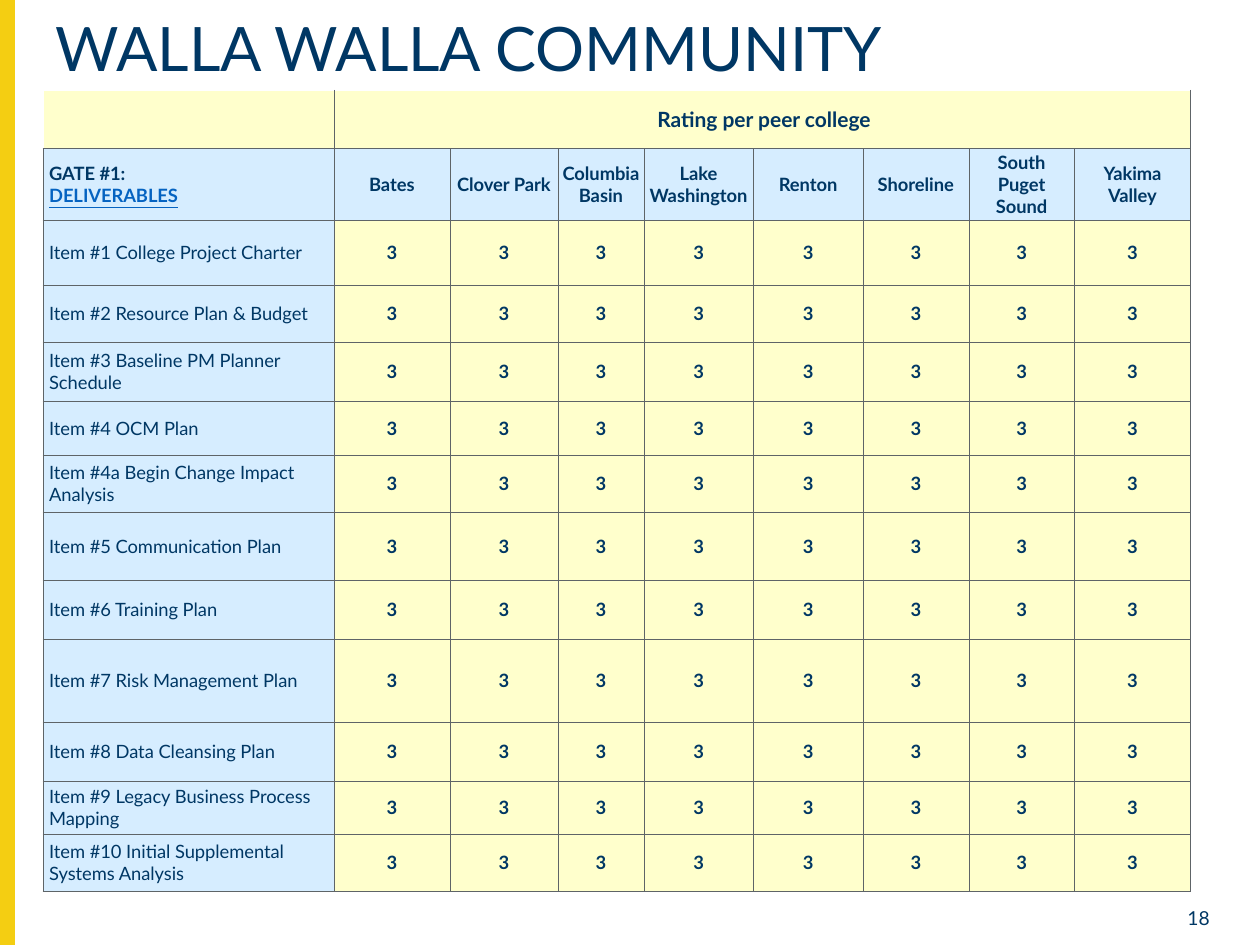
"""Builds the peer college rating slide for Walla Walla Community."""
from lxml import etree
from pptx import Presentation
from pptx.dml.color import RGBColor
from pptx.enum.shapes import MSO_SHAPE
from pptx.enum.text import MSO_ANCHOR, PP_ALIGN
from pptx.oxml.ns import qn
from pptx.util import Inches, Pt

RECTANGLE = MSO_SHAPE.RECTANGLE
TOP, MIDDLE = MSO_ANCHOR.TOP, MSO_ANCHOR.MIDDLE
LEFT, CENTER, RIGHT = PP_ALIGN.LEFT, PP_ALIGN.CENTER, PP_ALIGN.RIGHT

NAVY = RGBColor(0x00, 0x37, 0x64)
GOLD = RGBColor(0xF4, 0xCE, 0x12)
CREAM = RGBColor(0xFF, 0xFF, 0xCC)
SKY = RGBColor(0xD6, 0xED, 0xFF)
LINK_BLUE = RGBColor(0x05, 0x63, 0xC1)
GRAY = RGBColor(0x5E, 0x64, 0x67)
WHITE = RGBColor(0xFF, 0xFF, 0xFF)

COLUMN_WIDTHS = [2.31, 0.92, 0.86, 0.68, 0.87, 0.87, 0.84, 0.84, 0.92]
ROW_HEIGHTS = [0.46, 0.5, 0.52, 0.45, 0.47, 0.43, 0.45, 0.54, 0.47, 0.66, 0.47, 0.42, 0.45]
LABEL_INSETS = (0.05, 0, 0.02, 0)
RATING_INSETS = (0.03, 0.02, 0.03, 0.02)

COLLEGES = ["Bates", "Clover Park", "Columbia Basin", "Lake Washington",
            "Renton", "Shoreline", "South Puget Sound", "Yakima Valley"]
DELIVERABLES = [
    "Item #1 College Project Charter",
    "Item #2 Resource Plan & Budget",
    "Item #3 Baseline PM Planner Schedule",
    "Item #4 OCM Plan",
    "Item #4a Begin Change Impact Analysis",
    "Item #5 Communication Plan",
    "Item #6 Training Plan",
    "Item #7 Risk Management Plan",
    "Item #8 Data Cleansing Plan",
    "Item #9 Legacy Business Process Mapping",
    "Item #10 Initial Supplemental Systems Analysis",
]
RATING = "3"


def add_run(paragraph, text, size, bold=False, color=NAVY):
    run = paragraph.add_run()
    run.text = text
    run.font.name = "Lato"
    run.font.size = Pt(size)
    run.font.bold = bold
    run.font.color.rgb = color
    return run


def style_cell(cell, fill, insets, borders):
    properties = cell._tc.get_or_add_tcPr()
    for side, (color, width) in borders.items():
        line = etree.SubElement(properties, qn(f"a:ln{side}"), w=str(Pt(width)))
        solid = etree.SubElement(line, qn("a:solidFill"))
        etree.SubElement(solid, qn("a:srgbClr"), val=str(color))
    cell.fill.solid()
    cell.fill.fore_color.rgb = fill
    cell.vertical_anchor = MIDDLE
    (cell.margin_left, cell.margin_top,
     cell.margin_right, cell.margin_bottom) = [Inches(inset) for inset in insets]


prs = Presentation()
prs.slide_width, prs.slide_height = Inches(10), Inches(7.5)
slide = prs.slides.add_slide(prs.slide_layouts[6])

side_band = slide.shapes.add_shape(RECTANGLE, 0, 0, Inches(0.11), Inches(7.5))
side_band.shadow.inherit = False
side_band.fill.solid()
side_band.fill.fore_color.rgb = GOLD
side_band.line.color.rgb = GOLD
side_band.line.width = Pt(1)

for text, size, align, spacing, box in [
    ("18", 11, RIGHT, 1.0, (9.2, 7.14, 0.5, 0.21)),
    ("WALLA WALLA COMMUNITY", 35, LEFT, 0.9, (0.34, 0.1, 8.95, 0.58)),
]:
    frame = slide.shapes.add_textbox(*[Inches(value) for value in box]).text_frame
    frame.word_wrap = True
    frame.vertical_anchor = TOP
    paragraph = frame.paragraphs[0]
    paragraph.alignment = align
    paragraph.line_spacing = spacing
    add_run(paragraph, text, size)

ratings = slide.shapes.add_table(
    len(ROW_HEIGHTS), len(COLUMN_WIDTHS),
    Inches(0.34), Inches(0.72), Inches(9.1), Inches(6.28)).table
ratings.first_row = False
ratings.horz_banding = False
for column, width in zip(ratings.columns, COLUMN_WIDTHS):
    column.width = Inches(width)
for row, height in zip(ratings.rows, ROW_HEIGHTS):
    row.height = Inches(height)

for r in range(len(ROW_HEIGHTS)):
    for c in range(len(COLUMN_WIDTHS)):
        borders = {side: (GRAY, 0.25) for side in "LRTB"}
        if r == 0:
            borders["T"] = (WHITE, 1)
            if c == 0:
                borders["L"] = (WHITE, 1)
        is_sky = r == 1 or (c == 0 and r > 0)
        insets = LABEL_INSETS if r == 0 or c == 0 else RATING_INSETS
        style_cell(ratings.cell(r, c), SKY if is_sky else CREAM, insets, borders)

ratings.cell(0, 1).merge(ratings.cell(0, len(COLLEGES)))
rating_heading = ratings.cell(0, 1).text_frame.paragraphs[0]
rating_heading.alignment = CENTER
add_run(rating_heading, "Rating per peer college", 12, bold=True)

gate_heading = ratings.cell(1, 0).text_frame.paragraphs[0]
add_run(gate_heading, "GATE #1:", 10.5, bold=True)
gate_heading.add_line_break()
add_run(gate_heading, "DELIVERABLES", 10.5, bold=True, color=LINK_BLUE).font.underline = True

for r, deliverable in enumerate(DELIVERABLES, start=2):
    add_run(ratings.cell(r, 0).text_frame.paragraphs[0], deliverable, 10.5)

for c, college in enumerate(COLLEGES, start=1):
    for r, text in enumerate([college] + [RATING] * len(DELIVERABLES), start=1):
        paragraph = ratings.cell(r, c).text_frame.paragraphs[0]
        paragraph.alignment = CENTER
        add_run(paragraph, text, 10.5, bold=True)

prs.save("out.pptx")
